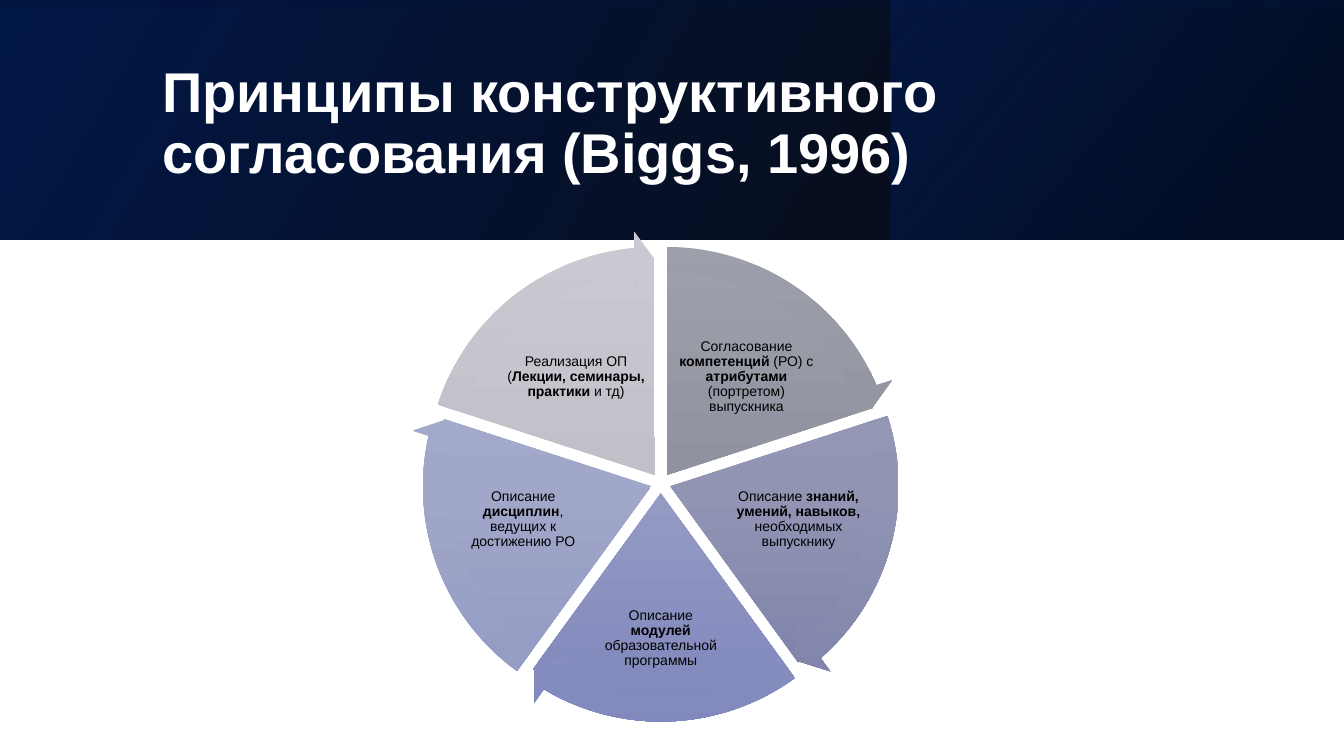
"""Build a slide with a five-sector cycle of constructive alignment."""
from math import cos, radians, sin

from pptx import Presentation
from pptx.dml.color import RGBColor
from pptx.enum.shapes import MSO_SHAPE
from pptx.enum.text import MSO_ANCHOR, PP_ALIGN
from pptx.oxml import parse_xml
from pptx.oxml.ns import nsdecls
from pptx.util import Pt

RECTANGLE, PIE, ARROW = MSO_SHAPE.RECTANGLE, MSO_SHAPE.PIE, MSO_SHAPE.CIRCULAR_ARROW
MIDDLE = MSO_ANCHOR.MIDDLE
LEFT, CENTER = PP_ALIGN.LEFT, PP_ALIGN.CENTER

THEME = {
    "font": "Arial",
    "title_size": Pt(40),
    "sector_size": Pt(10),
    "title_color": RGBColor(0xFF, 0xFF, 0xFF),
    "sector_color": RGBColor(0, 0, 0),
    "banner": [(0, "000000", 96), (100, "001848", 100)],
    "banner_right": [(19, "001030", 68), (100, "002060", 48)],
    "banner_veil": [(23, "001848", 16), (99, "000000", 45)],
    "sectors": [
        ("9D9FAB", "90929F", "7C7E90"),
        ("9EA1BE", "9194B3", "7C81AA"),
        ("A0A6CD", "949AC3", "8088BD"),
        ("AEB4D1", "A1A7C9", "9199C3"),
        ("C9CAD1", "BFC0C8", "B5B7C1"),
    ],
}


def add_gradient_shape(kind, box, stops, angle, adjustments=()):
    shape = slide.shapes.add_shape(kind, *(Pt(length) for length in box))
    shape.shadow.inherit = False
    for index, value in enumerate(adjustments):
        shape.adjustments[index] = value
    stop_xml = "".join(
        f'<a:gs pos="{position * 1000}"><a:srgbClr val="{color}">'
        f'<a:alpha val="{opacity * 1000}"/></a:srgbClr></a:gs>'
        for position, color, opacity in stops
    )
    shape._element.spPr.prstGeom.addnext(parse_xml(
        f'<a:gradFill {nsdecls("a")} rotWithShape="1"><a:gsLst>{stop_xml}</a:gsLst>'
        f'<a:lin ang="{angle * 60000}" scaled="0"/></a:gradFill>'
    ))
    shape.line.fill.background()
    return shape


def add_text(box, text, size, color, align, bold=False, inset=None):
    frame = slide.shapes.add_textbox(*(Pt(length) for length in box)).text_frame
    frame.word_wrap = True
    frame.vertical_anchor = MIDDLE
    if inset is not None:
        frame.margin_left = frame.margin_right = Pt(inset)
        frame.margin_top = frame.margin_bottom = Pt(inset)
    paragraph = frame.paragraphs[0]
    paragraph.alignment = align
    paragraph.line_spacing = 0.9
    paragraph.font.name = THEME["font"]
    paragraph.font.size = size
    paragraph.font.color.rgb = color
    paragraph.font.bold = bold
    for index, part in enumerate(text.split("*")):
        run = paragraph.add_run()
        run.text = part
        if index % 2:
            run.font.bold = True


SLIDE_WIDTH, SLIDE_HEIGHT, BANNER_HEIGHT = 960, 540, 171
presentation = Presentation()
presentation.slide_width, presentation.slide_height = Pt(SLIDE_WIDTH), Pt(SLIDE_HEIGHT)
slide = presentation.slides.add_slide(presentation.slide_layouts[6])

veil_left = (SLIDE_WIDTH - BANNER_HEIGHT) / 2
banner_parts = [
    ((0, 0, SLIDE_WIDTH, BANNER_HEIGHT), "banner", 330, 0),
    ((636.5, 0, 323.5, BANNER_HEIGHT), "banner_right", 320, 0),
    ((veil_left, -veil_left, BANNER_HEIGHT, SLIDE_WIDTH), "banner_veil", 350, 270),
]
for box, stops_name, angle, rotation in banner_parts:
    banner = add_gradient_shape(RECTANGLE, box, THEME[stops_name], angle)
    banner._element.spPr.xfrm.set("flipH", "1")
    banner.rotation = rotation

add_text((108.7, 27.4, 765.4, 123.8), "Принципы конструктивного согласования (Biggs, 1996)",
         THEME["title_size"], THEME["title_color"], LEFT, bold=True)

CENTER_X, CENTER_Y, GAP = 472, 345.2, 7.3
PIE_SIZE, ARROW_SIZE = 310.4, 349.2
ANGLE_UNIT = 0.6
SECTOR_ANGLE, HEAD_ANGLE = 72, 3.275

sector_texts = [
    ((483.1, 236.2, 100.1, 66.2),
     "Согласование *компетенций* (РО) с *атрибутами* (портретом) выпускника"),
    ((524.2, 334.1, 92.2, 74.2),
     "Описание *знаний, умений, навыков,* необходимых выпускнику"),
    ((427.7, 415.4, 88.6, 81.4), "Описание *модулей* образовательной программы"),
    ((327.6, 334.1, 92.2, 74.2), "Описание *дисциплин*, ведущих к достижению РО"),
    ((361.4, 236.2, 100.1, 66.2), "Реализация ОП (*Лекции, семинары, практики* и тд)"),
]

arrows = []
for index, (text_box, text) in enumerate(sector_texts):
    start = (270 + index * SECTOR_ANGLE) % 360
    end = (start + SECTOR_ANGLE) % 360
    middle = radians(start + SECTOR_ANGLE / 2)
    x, y = CENTER_X + GAP * cos(middle), CENTER_Y + GAP * sin(middle)
    pie_box, arrow_box = (
        (x - size / 2, y - size / 2, size, size) for size in (PIE_SIZE, ARROW_SIZE)
    )
    stops = [(50 * step, color, 100) for step, color in enumerate(THEME["sectors"][index])]
    start_value, end_value = start * ANGLE_UNIT, end * ANGLE_UNIT
    add_gradient_shape(PIE, pie_box, stops, 90, (start_value, end_value))
    add_text(text_box, text, THEME["sector_size"], THEME["sector_color"], CENTER, inset=1)
    arrows.append((arrow_box, stops,
                   (0.051, HEAD_ANGLE, end_value - HEAD_ANGLE, start_value, 0.059)))

for arrow_box, stops, adjustments in arrows:
    add_gradient_shape(ARROW, arrow_box, stops, 90, adjustments)

presentation.save("out.pptx")
